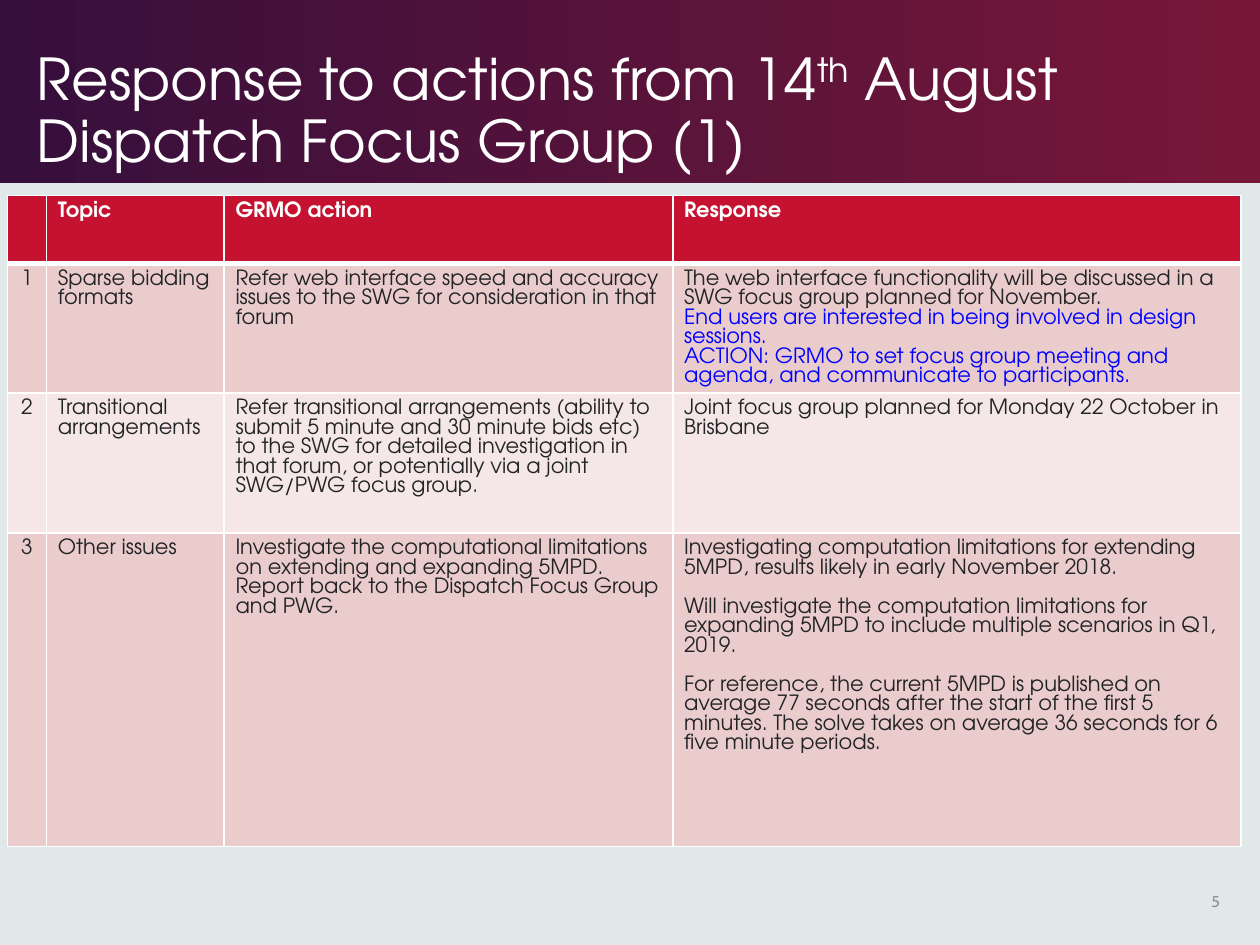
from dataclasses import dataclass

from lxml.etree import SubElement
from pptx import Presentation
from pptx.dml.color import RGBColor
from pptx.enum.shapes import MSO_SHAPE as Shape
from pptx.enum.text import MSO_ANCHOR as Anchor, MSO_AUTO_SIZE as AutoSize, PP_ALIGN as Align
from pptx.oxml.ns import qn
from pptx.util import Inches, Pt


@dataclass(frozen=True)
class Theme:
    font: str = "TeX Gyre Adventor"
    number_font: str = "Cabin"
    title_size: float = 33
    body_size: float = 12
    body_line: float = 11.14
    number_size: float = 9
    page: str = "E0E8EA"
    band: tuple[str, str] = ("360F3C", "771738")
    white: str = "FFFFFF"
    ink: str = "222324"
    update: str = "0000FF"
    number: str = "8D8D8E"
    header: str = "C41230"
    stripes: tuple[str, str] = ("EACCCD", "F5E7E8")


@dataclass(frozen=True)
class Para:
    text: str
    update: bool = False
    gap: bool = False


@dataclass(frozen=True)
class Action:
    topic: str
    action: str
    response: tuple[Para, ...]


THEME = Theme()
WIDTH, HEIGHT = Inches(10), Inches(7.5)
COLUMNS = (0.31, 1.41, 3.56, 4.51)
ROWS = (0.54, 1.02, 1.11, 2.49)
HEADINGS = ("", "Topic", "GRMO action", "Response")
ACTIONS = (
    Action(
        "Sparse bidding formats",
        "Refer web interface speed and accuracy issues to the SWG for consideration in that forum",
        (
            Para("The web interface functionality will be discussed in a SWG focus group "
                 "planned for November."),
            Para("End users are interested in being involved in design sessions.", update=True),
            Para("ACTION: GRMO to set focus group meeting and agenda, and communicate to "
                 "participants.", update=True),
        ),
    ),
    Action(
        "Transitional arrangements",
        "Refer transitional arrangements (ability to submit 5 minute and 30 minute bids etc) "
        "to the SWG for detailed investigation in that forum, or potentially via a joint "
        "SWG/PWG focus group.",
        (Para("Joint focus group planned for Monday 22 October in Brisbane"),),
    ),
    Action(
        "Other issues",
        "Investigate the computational limitations on extending and expanding 5MPD. "
        "Report back to the Dispatch Focus Group and PWG.",
        (
            Para("Investigating computation limitations for extending 5MPD, results likely "
                 "in early November 2018."),
            Para("Will investigate the computation limitations for expanding 5MPD to include "
                 "multiple scenarios in Q1, 2019.", gap=True),
            Para("For reference, the current 5MPD is published on average 77 seconds after "
                 "the start of the first 5 minutes. The solve takes on average 36 seconds "
                 "for 6 five minute periods.", gap=True),
        ),
    ),
)


def rgb(color: str) -> RGBColor:
    return RGBColor.from_string(color)


def style(font, name: str, size: float, color: str, bold: bool = False) -> None:
    font.name, font.size, font.bold = name, Pt(size), bold
    font.color.rgb = rgb(color)


def share(left: float, top: float, width: float, height: float) -> tuple[int, ...]:
    """Turn shares of the slide's size into a position and a size."""
    return (int(left * WIDTH), int(top * HEIGHT), int(width * WIDTH), int(height * HEIGHT))


def add_band(slide) -> None:
    band = slide.shapes.add_shape(Shape.RECTANGLE, *share(0, 0, 1, 0.1933))
    band.shadow.inherit = False
    band.line.fill.background()
    band.fill.gradient()
    band.fill.gradient_angle = 0
    for stop, color, position in zip(band.fill.gradient_stops, THEME.band, (0, 0.99)):
        stop.color.rgb = rgb(color)
        stop.position = position
    slide.shapes._spTree.insert(2, band._element)  # behind the title


def add_title(slide) -> None:
    title = slide.shapes.title
    title.left, title.top, title.width, title.height = share(0.019, 0.028, 0.853, 0.164)
    tf = title.text_frame
    tf.word_wrap, tf.auto_size = True, AutoSize.NONE
    tf.vertical_anchor = Anchor.BOTTOM
    p = tf.paragraphs[0]
    p.alignment, p.line_spacing = Align.LEFT, 0.9
    for text in ("Response to actions from 14", "th", " August Dispatch Focus Group (1)"):
        r = p.add_run()
        r.text = text
        style(r.font, THEME.font, THEME.title_size, THEME.white)
    p.runs[1].font._element.set("baseline", "30000")


def set_borders(cell, bottom: float) -> None:
    tc_pr = cell._tc.get_or_add_tcPr()
    for index, (side, width) in enumerate((("L", 1), ("R", 1), ("T", 1), ("B", bottom))):
        ln = SubElement(tc_pr, qn(f"a:ln{side}"), w=str(Pt(width)))
        fill = SubElement(ln, qn("a:solidFill"))
        SubElement(fill, qn("a:srgbClr"), val=THEME.white)
        tc_pr.insert(index, ln)


def fill_cell(cell, paras: tuple[Para, ...], fill: str, header: bool = False,
              align: Align = Align.LEFT) -> None:
    cell.fill.solid()
    cell.fill.fore_color.rgb = rgb(fill)
    set_borders(cell, 3 if header else 1)
    cell.margin_left = cell.margin_right = Inches(0.09)
    cell.margin_top = cell.margin_bottom = Inches(0.05)
    tf = cell.text_frame
    for index, para in enumerate(paras):
        p = tf.add_paragraph() if index else tf.paragraphs[0]
        p.text = para.text
        p.alignment, p.line_spacing = align, Pt(THEME.body_line)
        if para.gap:
            p.space_before = Pt(THEME.body_line)
        color = THEME.white if header else THEME.update if para.update else THEME.ink
        style(p.font, THEME.font, THEME.body_size, color, header)
        for r in p.runs:
            style(r.font, THEME.font, THEME.body_size, color, header)


def add_actions(slide) -> None:
    frame = slide.shapes.add_table(len(ROWS), len(COLUMNS), Inches(0.06), Inches(1.55),
                                   Inches(sum(COLUMNS)), Inches(sum(ROWS)))
    table = frame.table
    for column, width in zip(table.columns, COLUMNS):
        column.width = Inches(width)
    for row, height in zip(table.rows, ROWS):
        row.height = Inches(height)
    for col, heading in enumerate(HEADINGS):
        fill_cell(table.cell(0, col), (Para(heading),), THEME.header, header=True)
    for row, item in enumerate(ACTIONS, 1):
        contents = ((Para(str(row)),), (Para(item.topic),), (Para(item.action),), item.response)
        for col, paras in enumerate(contents):
            fill_cell(table.cell(row, col), paras, THEME.stripes[(row - 1) % 2],
                      align=Align.LEFT if col else Align.CENTER)


def add_page_number(slide) -> None:
    tf = slide.shapes.add_textbox(*share(0.931, 0.927, 0.047, 0.053)).text_frame
    tf.word_wrap, tf.vertical_anchor = True, Anchor.MIDDLE
    tf.text = "5"
    p = tf.paragraphs[0]
    p.alignment = Align.RIGHT
    style(p.runs[0].font, THEME.number_font, THEME.number_size, THEME.number)


def main() -> None:
    prs = Presentation()
    prs.slide_width, prs.slide_height = WIDTH, HEIGHT
    slide = prs.slides.add_slide(prs.slide_layouts[5])
    slide.background.fill.solid()
    slide.background.fill.fore_color.rgb = rgb(THEME.page)
    add_band(slide)
    add_title(slide)
    add_actions(slide)
    add_page_number(slide)
    prs.save("out.pptx")


if __name__ == "__main__":
    main()
